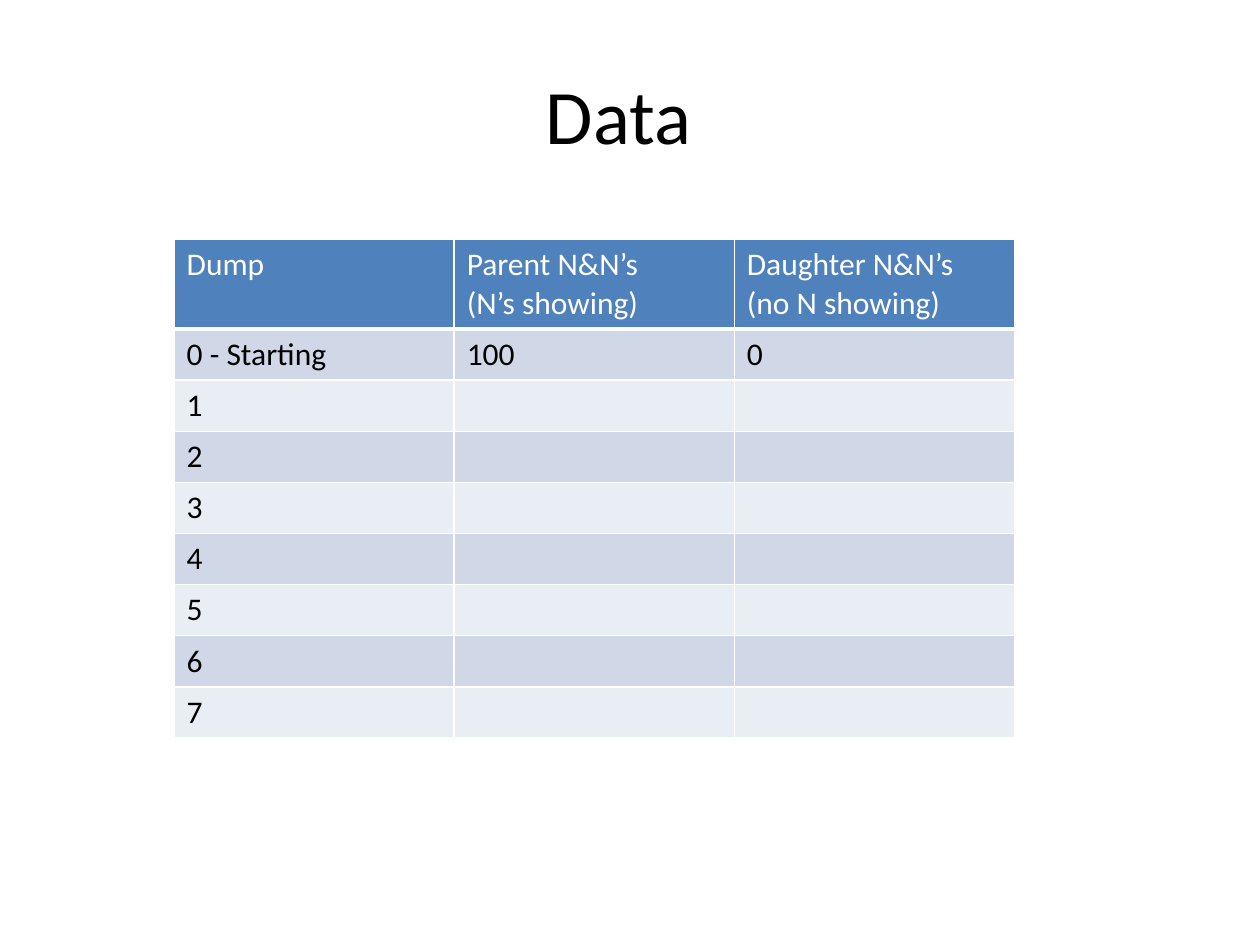
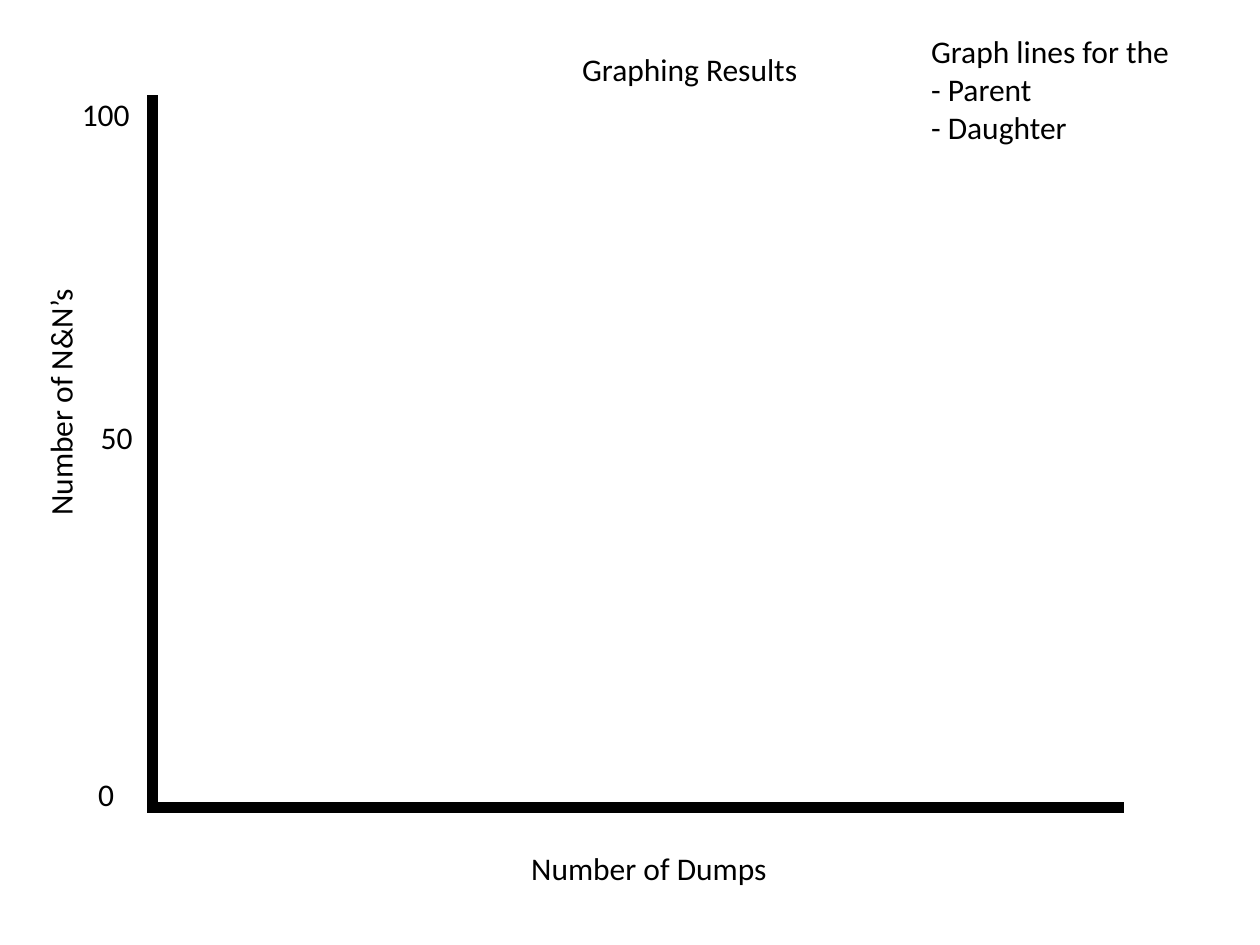
from dataclasses import dataclass

from pptx import Presentation
from pptx.dml.color import RGBColor
from pptx.enum.text import MSO_ANCHOR, MSO_AUTO_SIZE, PP_ALIGN
from pptx.oxml.xmlchemy import OxmlElement
from pptx.slide import Slide
from pptx.table import _Cell as Cell
from pptx.text.text import TextFrame
from pptx.util import Cm, Pt


@dataclass(frozen=True)
class Theme:
    font: str = "Calibri"
    title_size: int = 44
    text_size: int = 18
    ink: str = "000000"
    paper: str = "FFFFFF"
    header: str = "4F81BD"
    odd_band: str = "D0D8E8"
    even_band: str = "E9EDF4"
    grid_width: int = 1
    header_rule: int = 3
    axis_width: int = 6


@dataclass(frozen=True)
class Box:
    left: float
    top: float
    width: float
    height: float = 1.03

    def lengths(self) -> tuple[Cm, Cm, Cm, Cm]:
        return Cm(self.left), Cm(self.top), Cm(self.width), Cm(self.height)


@dataclass(frozen=True)
class Label:
    lines: tuple[str, ...]
    box: Box
    rotation: int = 0
    wrap: bool = False


@dataclass(frozen=True)
class Axis:
    start: tuple[float, float]
    end: tuple[float, float]


THEME = Theme()
TITLE_ONLY = 5

TABLE_BOX = Box(3.51, 4.83, 16.94, 10.04)
HEADER_HEIGHT = 1.8
ROW_HEIGHT = 1.03
DUMPS = 7
HEADINGS = (
    ("Dump",),
    ("Parent N&N’s", "(N’s showing)"),
    ("Daughter N&N’s", "(no N showing)"),
)
READINGS = [
    (("0 - Starting",), ("100",), ("0",)),
    *(((str(dump),), (), ()) for dump in range(1, DUMPS + 1)),
]

AXES = (
    Axis((2.97, 16.28), (22.66, 16.28)),
    Axis((3.07, 16.31), (3.07, 1.91)),
)
GRAPH_LABELS = (
    Label(("Number of Dumps",), Box(10.46, 16.99, 5.33)),
    Label(("Number of N&N’s",), Box(-1.47, 7.44, 5.38), rotation=270),
    Label(("Graph lines for the", "- Parent", "- Daughter"), Box(18.52, 0.53, 5.38, 2.57)),
    Label(("100",), Box(1.4, 1.8, 1.7), wrap=True),
    Label(("50",), Box(1.78, 8.31, 1.7), wrap=True),
    Label(("0",), Box(1.73, 15.49, 0.89), wrap=True),
)


def write(
    frame: TextFrame,
    lines: tuple[str, ...],
    size: int = THEME.text_size,
    color: str = THEME.ink,
    align: PP_ALIGN = PP_ALIGN.LEFT,
) -> None:
    for index, line in enumerate(lines):
        paragraph = frame.add_paragraph() if index else frame.paragraphs[0]
        paragraph.alignment = align
        run = paragraph.add_run()
        run.text = line
        run.font.name = THEME.font
        run.font.size = Pt(size)
        run.font.bold = False
        run.font.color.rgb = RGBColor.from_string(color)


def place_title(
    slide: Slide,
    text: str,
    box: Box,
    size: int,
    align: PP_ALIGN,
    anchor: MSO_ANCHOR,
    wrap: bool,
) -> None:
    title = slide.shapes.title
    title.left, title.top, title.width, title.height = box.lengths()
    frame = title.text_frame
    frame.auto_size = MSO_AUTO_SIZE.NONE
    frame.vertical_anchor = anchor
    frame.word_wrap = wrap
    write(frame, (text,), size, align=align)


def add_label(slide: Slide, label: Label) -> None:
    text_box = slide.shapes.add_textbox(*label.box.lengths())
    text_box.rotation = label.rotation
    frame = text_box.text_frame
    frame.word_wrap = label.wrap
    frame.auto_size = MSO_AUTO_SIZE.SHAPE_TO_FIT_TEXT
    write(frame, label.lines)


def add_axis(slide: Slide, axis: Axis) -> None:
    ends = (Cm(value) for value in (*axis.start, *axis.end))
    line = slide.shapes.add_connector(1, *ends)
    line.line.color.rgb = RGBColor.from_string(THEME.ink)
    line.line.width = Pt(THEME.axis_width)
    line._element.spPr.append(OxmlElement("a:effectLst"))


def set_borders(cell: Cell, is_header: bool) -> None:
    properties = cell._tc.get_or_add_tcPr()
    for side in ("lnL", "lnR", "lnT", "lnB"):
        thick = is_header and side == "lnB"
        edge = OxmlElement(f"a:{side}")
        edge.set("w", str(Pt(THEME.header_rule if thick else THEME.grid_width)))
        fill = OxmlElement("a:solidFill")
        color = OxmlElement("a:srgbClr")
        color.set("val", THEME.paper)
        fill.append(color)
        edge.append(fill)
        properties.append(edge)


def add_readings_table(slide: Slide) -> None:
    rows = [HEADINGS, *READINGS]
    table = slide.shapes.add_table(len(rows), len(HEADINGS), *TABLE_BOX.lengths()).table
    for row_index, row in enumerate(rows):
        is_header = row_index == 0
        table.rows[row_index].height = Cm(HEADER_HEIGHT if is_header else ROW_HEIGHT)
        band = THEME.odd_band if row_index % 2 else THEME.even_band
        for column_index, lines in enumerate(row):
            cell = table.cell(row_index, column_index)
            set_borders(cell, is_header)
            cell.fill.solid()
            cell.fill.fore_color.rgb = RGBColor.from_string(THEME.header if is_header else band)
            write(cell.text_frame, lines, color=THEME.paper if is_header else THEME.ink)


def build_data_slide(slide: Slide) -> None:
    place_title(
        slide, "Data", Box(1.04, 0.71, 22.86, 3.18),
        THEME.title_size, PP_ALIGN.CENTER, MSO_ANCHOR.MIDDLE, wrap=True,
    )
    add_readings_table(slide)


def build_graph_slide(slide: Slide) -> None:
    for axis in AXES:
        add_axis(slide, axis)
    place_title(
        slide, "Graphing Results", Box(11.48, 0.89, 4.9),
        THEME.text_size, PP_ALIGN.LEFT, MSO_ANCHOR.TOP, wrap=False,
    )
    for label in GRAPH_LABELS:
        add_label(slide, label)


def main() -> None:
    deck = Presentation()
    deck.slide_width, deck.slide_height = Cm(25.4), Cm(19.05)
    for build in (build_data_slide, build_graph_slide):
        build(deck.slides.add_slide(deck.slide_layouts[TITLE_ONLY]))
    deck.save("out.pptx")


if __name__ == "__main__":
    main()
